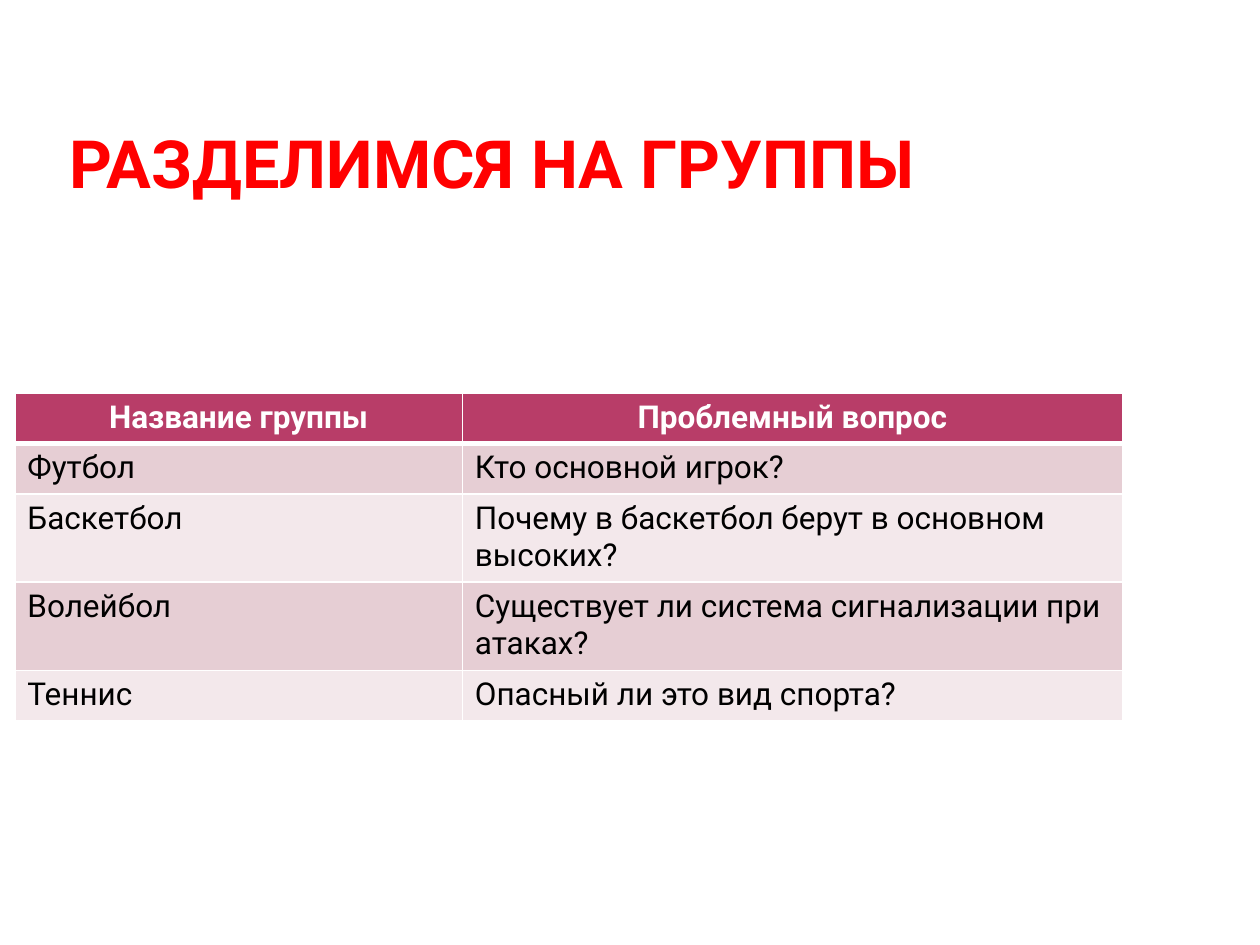
from typing import NamedTuple

from lxml.etree import SubElement
from pptx import Presentation
from pptx.dml.color import RGBColor
from pptx.enum.text import MSO_ANCHOR as Anchor, PP_ALIGN as Align
from pptx.oxml.ns import qn
from pptx.util import Cm, Pt

FONT = "Roboto"
RED = RGBColor(0xFF, 0x00, 0x00)
BERRY = RGBColor(0xB8, 0x3D, 0x68)
ROSE = RGBColor(0xE6, 0xCE, 0xD4)
BLUSH = RGBColor(0xF3, 0xE8, 0xEB)
WHITE = RGBColor(0xFF, 0xFF, 0xFF)
BLACK = RGBColor(0x00, 0x00, 0x00)

COLUMN_WIDTHS = (Cm(9.02), Cm(13.31))
ROW_HEIGHT = Cm(0.99)


class Group(NamedTuple):
    """One table row: a group name and its question."""
    name: str
    question: str


HEADER = Group("Название группы", "Проблемный вопрос")
GROUPS = (
    Group("Футбол", "Кто основной игрок?"),
    Group("Баскетбол", "Почему в баскетбол берут в основном высоких?"),
    Group("Волейбол", "Существует ли система сигнализации при атаках?"),
    Group("Теннис", "Опасный ли это вид спорта?"),
)


def style_font(para, size: int, color: RGBColor, bold: bool) -> None:
    """Set the font of a whole paragraph."""
    para.font.name = FONT
    para.font.size = Pt(size)
    para.font.bold = bold
    para.font.color.rgb = color


def add_title(page, text: str) -> None:
    """Add the slide heading, anchored at the bottom of its box."""
    frame = page.shapes.add_textbox(Cm(1.27), Cm(0.89), Cm(20.12), Cm(3.18)).text_frame
    frame.word_wrap = True
    frame.vertical_anchor = Anchor.BOTTOM
    frame.margin_left = frame.margin_right = Cm(0.13)
    frame.margin_top = frame.margin_bottom = 0
    frame.text = text
    style_font(frame.paragraphs[0], 38, RED, True)


def add_borders(cell, top: int, bottom: int) -> None:
    """Draw white borders on a cell; top and bottom widths are in points."""
    properties = cell._tc.get_or_add_tcPr()
    for side, width in (("L", 1), ("R", 1), ("T", top), ("B", bottom)):
        line = SubElement(properties, qn(f"a:ln{side}"), w=str(Pt(width)))
        fill = SubElement(line, qn("a:solidFill"))
        SubElement(fill, qn("a:srgbClr"), val=str(WHITE))


def fill_row(cells, group: Group, index: int) -> None:
    """Write and style one table row; row 0 is the header."""
    is_header = index == 0
    background = BERRY if is_header else (BLUSH, ROSE)[index % 2]
    for cell, text in zip(cells, group):
        add_borders(cell, top=3 if index == 1 else 1, bottom=3 if is_header else 1)
        cell.fill.solid()
        cell.fill.fore_color.rgb = background
        cell.text = text
        para = cell.text_frame.paragraphs[0]
        para.alignment = Align.CENTER if is_header else Align.LEFT
        style_font(para, 18, WHITE if is_header else BLACK, is_header)


def add_group_table(page) -> None:
    """Add the table of groups and their questions."""
    rows = (HEADER, *GROUPS)
    table = page.shapes.add_table(
        len(rows), len(COLUMN_WIDTHS), Cm(0.3), Cm(7.92),
        sum(COLUMN_WIDTHS), ROW_HEIGHT * len(rows),
    ).table
    for column, width in zip(table.columns, COLUMN_WIDTHS):
        column.width = width
    for index, (row, group) in enumerate(zip(table.rows, rows)):
        row.height = ROW_HEIGHT
        fill_row(row.cells, group, index)


def main() -> None:
    """Build and save the deck."""
    deck = Presentation()
    deck.slide_width, deck.slide_height = Cm(25.4), Cm(19.05)
    page = deck.slides.add_slide(deck.slide_layouts[6])
    add_title(page, "РАЗДЕЛИМСЯ НА ГРУППЫ")
    add_group_table(page)
    deck.save("out.pptx")


if __name__ == "__main__":
    main()
